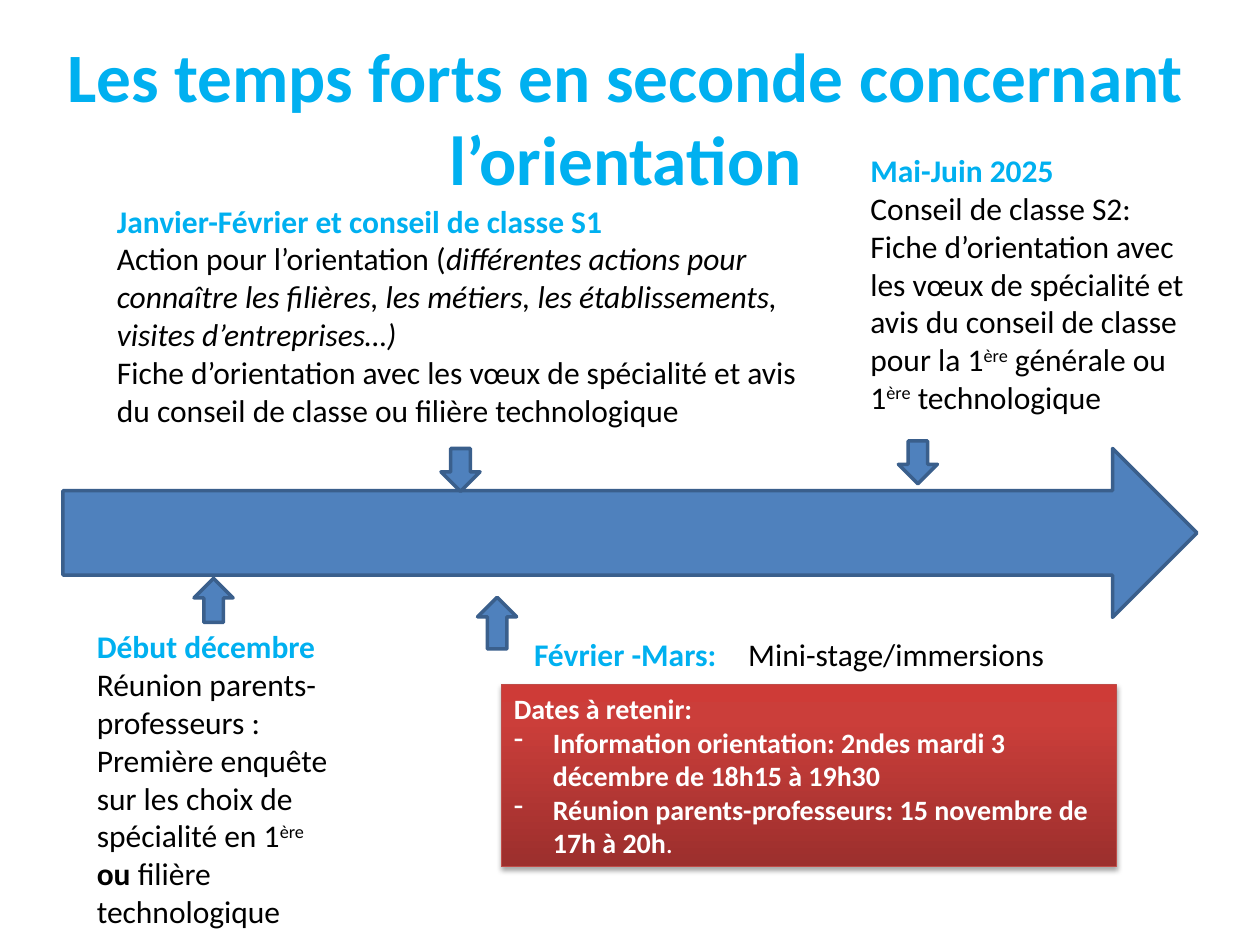
from dataclasses import dataclass

from lxml import etree
from pptx import Presentation
from pptx import util as u
from pptx.dml.color import RGBColor
from pptx.enum import shapes, text
from pptx.oxml import ns


@dataclass(frozen=True)
class Theme:
    font: str = "Calibri"
    accent: str = "00B0F0"
    ink: str = "000000"
    light: str = "FFFFFF"
    arrow: str = "4F81BD"
    arrow_edge: str = "3A5F8C"
    panel_edge: str = "BF4C48"
    panel_stops: tuple = ((0, "9C2F2D"), (80, "CB3E3A"), (100, "CE3B37"))
    title_size: float = 39.6
    body_size: float = 18
    panel_size: float = 16


THEME = Theme()
BOLD = {"bold": True}
ITALIC = {"italic": True}
SUPER = {"baseline": "30000"}
HEADING = {"bold": True, "color": THEME.accent}
WHITE = {"color": THEME.light, "size": THEME.panel_size}
WHITE_BOLD = {**WHITE, "bold": True}


def inches(box):
    return [u.Inches(value) for value in box]


def add_xml(parent, tag, **attributes):
    return etree.SubElement(parent, ns.qn(tag), attributes)


def add_run(paragraph, wording, style):
    values = {"color": THEME.ink, "size": THEME.body_size, **style}
    run = paragraph.add_run()
    run.text = wording
    run.font.color.rgb = RGBColor.from_string(values.pop("color"))
    baseline = values.pop("baseline", None)
    if baseline:
        run.font._element.set("baseline", baseline)
    values.update(name=THEME.font, size=u.Pt(values["size"]))
    for name, value in values.items():
        setattr(run.font, name, value)


def write(frame, paragraphs, align=text.PP_ALIGN.LEFT, bullets_from=None):
    for index, runs in enumerate(paragraphs):
        paragraph = frame.paragraphs[0] if index == 0 else frame.add_paragraph()
        paragraph.alignment = align
        if bullets_from is not None and index >= bullets_from:
            properties = paragraph._p.get_or_add_pPr()
            indent = u.Inches(0.31)
            properties.set("marL", str(indent))
            properties.set("indent", str(-indent))
            add_xml(properties, "a:buChar", char="-")
        for wording, style in runs:
            add_run(paragraph, wording, style)


def add_title(slide, box, wording):
    title = slide.shapes.title
    title.left, title.top, title.width, title.height = inches(box)
    frame = title.text_frame
    frame.auto_size = text.MSO_AUTO_SIZE.NONE
    frame.vertical_anchor = text.MSO_ANCHOR.MIDDLE
    style = {**HEADING, "size": THEME.title_size}
    write(frame, [[(wording, style)]], text.PP_ALIGN.CENTER)


def add_note(slide, box, paragraphs, wrap=True):
    frame = slide.shapes.add_textbox(*inches(box)).text_frame
    frame.word_wrap = wrap
    frame.auto_size = text.MSO_AUTO_SIZE.SHAPE_TO_FIT_TEXT
    write(frame, paragraphs)


def add_arrow(slide, box, kind=shapes.MSO_SHAPE.DOWN_ARROW, rotation=0):
    arrow = slide.shapes.add_shape(kind, *inches(box))
    arrow.rotation = rotation
    arrow.shadow.inherit = False
    arrow.fill.solid()
    arrow.fill.fore_color.rgb = RGBColor.from_string(THEME.arrow)
    arrow.line.color.rgb = RGBColor.from_string(THEME.arrow_edge)
    arrow.line.width = u.Pt(2)


def add_timeline(slide, box):
    add_arrow(slide, box, shapes.MSO_SHAPE.RIGHT_ARROW)
    left, top = box[:2]
    markers = (
        (3.29, 1.18, 0.41, 180),
        (1.04, 1.03, 0.35, 180),
        (3, 0, 0.34, 0),
        (6.63, -0.06, 0.34, 0),
    )
    for across, down, height, rotation in markers:
        add_arrow(slide, (left + across, top + down, 0.31, height), rotation=rotation)


def add_dates_panel(slide, box, paragraphs):
    panel = slide.shapes.add_shape(shapes.MSO_SHAPE.RECTANGLE, *inches(box))
    panel.fill.gradient()
    panel.fill.gradient_angle = 90
    properties = panel._element.spPr
    stops = properties.find(".//" + ns.qn("a:gsLst"))
    for stop in list(stops):
        stops.remove(stop)
    for position, color in THEME.panel_stops:
        stop = add_xml(stops, "a:gs", pos=str(position * 1000))
        add_xml(stop, "a:srgbClr", val=color)
    panel.line.color.rgb = RGBColor.from_string(THEME.panel_edge)
    panel.line.width = u.Pt(0.75)
    panel.shadow.inherit = False
    shadow = add_xml(
        properties.find(ns.qn("a:effectLst")), "a:outerShdw",
        blurRad=str(u.Pt(3.1)), dist=str(u.Pt(1.8)), dir="5400000", rotWithShape="0",
    )
    add_xml(add_xml(shadow, "a:srgbClr", val=THEME.ink), "a:alpha", val="35000")
    frame = panel.text_frame
    frame.word_wrap = True
    frame.auto_size = text.MSO_AUTO_SIZE.SHAPE_TO_FIT_TEXT
    frame.vertical_anchor = text.MSO_ANCHOR.MIDDLE
    write(frame, paragraphs, bullets_from=1)


def main():
    presentation = Presentation()
    presentation.slide_width = u.Inches(10)
    presentation.slide_height = u.Inches(7.5)
    slide = presentation.slides.add_slide(presentation.slide_layouts[5])
    add_title(slide, (0.28, 0.3, 9.37, 1.25),
              "Les temps forts en seconde concernant l’orientation")
    add_timeline(slide, (0.5, 3.56, 9, 1.34))
    add_note(slide, (0.67, 4.93, 2.05, 2.52), [
        [("Début décembre", HEADING)],
        [("Réunion parents-professeurs :", {})],
        [("Première enquête sur les choix de spécialité en 1", {}), ("ère ", SUPER),
         ("ou ", BOLD), ("filière technologique", {})],
    ])
    add_note(slide, (0.83, 1.55, 5.67, 1.92), [
        [("Janvier-Février et conseil de classe S1", HEADING)],
        [("Action pour l’orientation (", {}),
         ("différentes actions pour connaître les filières, les métiers, "
          "les établissements, visites d’entreprises…)", ITALIC)],
        [("Fiche d’orientation avec les vœux de spécialité et avis du conseil "
          "de classe ou filière technologique", {})],
    ])
    add_note(slide, (4.14, 4.99, 1.76, 0.4), [[("Février -Mars:", HEADING)]])
    add_note(slide, (6.81, 1.15, 2.86, 2.22), [
        [("Mai-Juin 2025", HEADING)],
        [("Conseil de classe S2:", {})],
        [("Fiche d’orientation avec les vœux de spécialité et avis du conseil "
          "de classe pour la 1", {}), ("ère", SUPER), (" générale ou 1", {}),
         ("ère", SUPER), (" technologique", {})],
    ])
    add_note(slide, (5.84, 4.99, 2.57, 0.4), [[("Mini-stage/immersions", {})]], wrap=False)
    add_dates_panel(slide, (3.98, 5.43, 4.88, 1.45), [
        [("Dates à retenir:", WHITE_BOLD)],
        [("Information orientation: 2ndes mardi 3 décembre de 18h15 à 19h30", WHITE_BOLD)],
        [("Réunion parents-professeurs: 15 novembre de 17h à 20h", WHITE_BOLD),
         (".", WHITE)],
    ])
    presentation.save("out.pptx")


if __name__ == "__main__":
    main()
